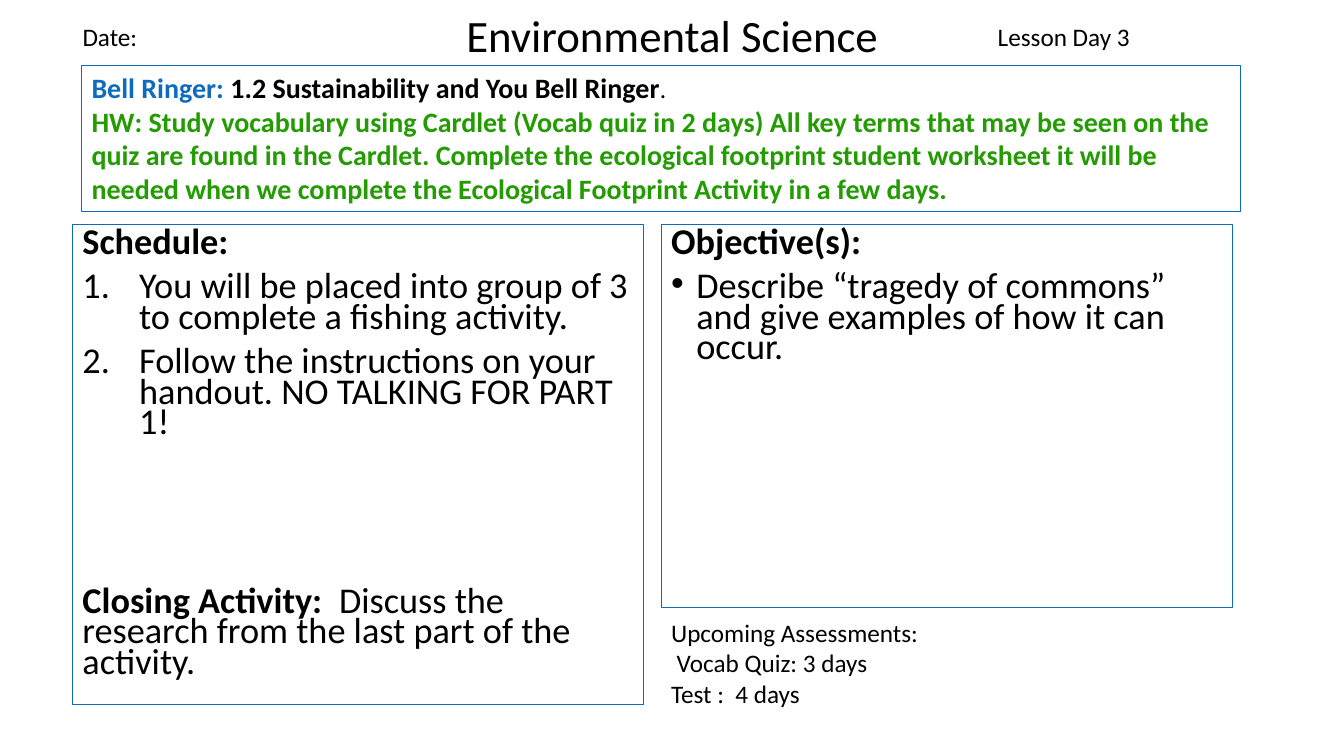
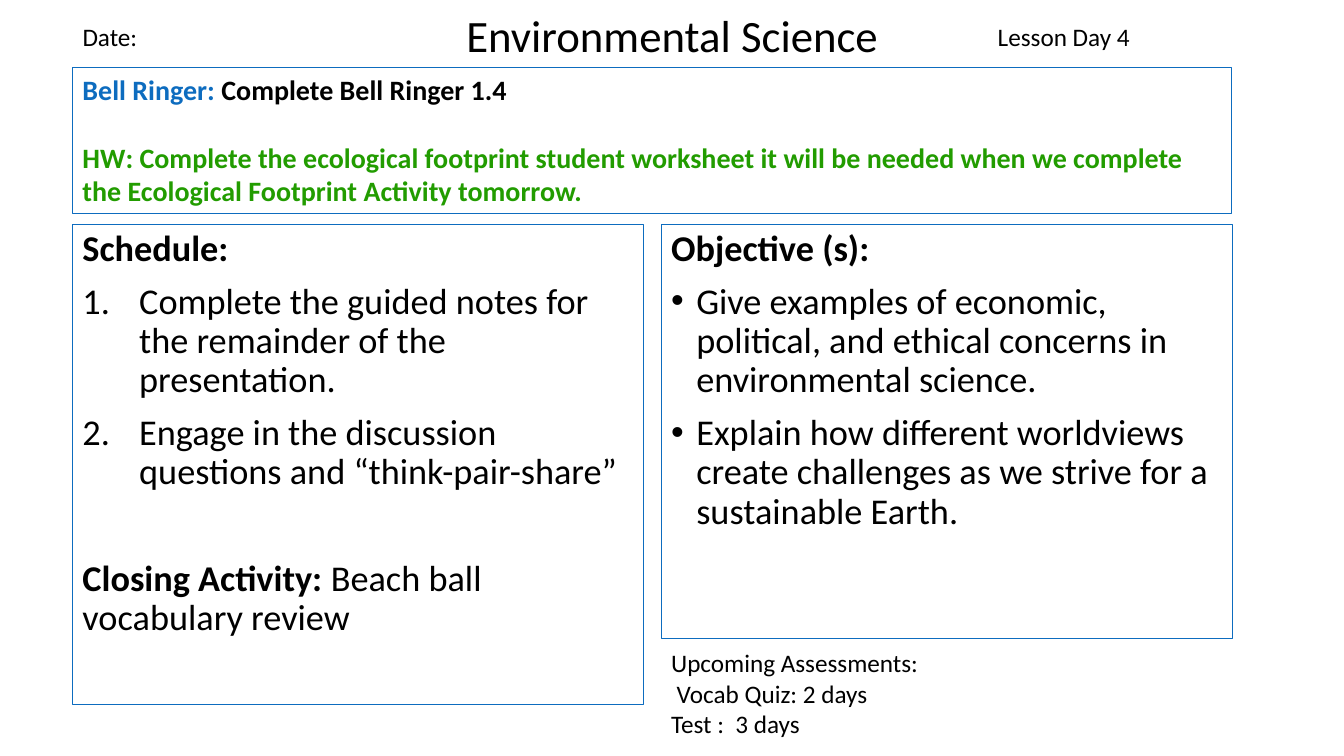
"""Build two daily lesson agenda slides for an environmental science class."""
from dataclasses import dataclass

from lxml import etree
from pptx import Presentation
from pptx import util as u
from pptx.dml import color
from pptx.enum import text
from pptx.oxml import ns


@dataclass(frozen=True)
class Theme:
    font: str = "Calibri"
    ink: str = "000000"
    blue: str = "0D6CBF"
    green: str = "229C00"
    title: float = 32
    body: float = 25.9
    notice: float = 20
    small: float = 18
    border: float = 0.75
    space: float = 10


@dataclass(frozen=True)
class Lesson:
    day: int
    notice_at: tuple
    bell_ringer: str
    bell_ending: str
    homework: str
    homework_gap: float
    schedule: tuple
    closing_label: str
    closing: str
    closing_gap: float
    objective_label: str
    objectives: tuple
    objective_height: float
    spacing: float
    quiz_days: int
    test_days: int


THEME = Theme()
LEFT, RIGHT, TOP = 51.84, 472.3, 160.6
COLUMN, SCHEDULE_HEIGHT = 408.2, 342.7
NUMBER = ("buAutoNum", {"type": "arabicPeriod"}, 40.5)
BULLET = ("buChar", {"char": "•"}, 18)

LESSONS = (
    Lesson(
        day=3,
        notice_at=(58.3, 46.8),
        bell_ringer="1.2 Sustainability and You Bell Ringer",
        bell_ending=".",
        homework="HW: Study vocabulary using Cardlet (Vocab quiz in 2 days) All key terms "
        "that may be seen on the quiz are found in the Cardlet. Complete the ecological "
        "footprint student worksheet it will be needed when we complete the Ecological "
        "Footprint Activity in a few days.",
        homework_gap=0,
        schedule=(
            "You will be placed into group of 3 to complete a fishing activity.",
            "Follow the instructions on your handout. NO TALKING FOR PART 1!",
        ),
        closing_label="Closing Activity:  ",
        closing="Discuss the research from the last part of the activity.",
        closing_gap=106,
        objective_label="Objective(s):",
        objectives=("Describe “tragedy of commons” and give examples of how it can occur.",),
        objective_height=273.6,
        spacing=0.7,
        quiz_days=3,
        test_days=4,
    ),
    Lesson(
        day=4,
        notice_at=(LEFT, 48.2),
        bell_ringer="Complete Bell Ringer 1.4",
        bell_ending="",
        homework="HW: Complete the ecological footprint student worksheet it will be needed "
        "when we complete the Ecological Footprint Activity tomorrow.",
        homework_gap=24.4,
        schedule=(
            "Complete the guided notes for the remainder of the presentation.",
            "Engage in the discussion questions and “think-pair-share”",
        ),
        closing_label="Closing Activity: ",
        closing="Beach ball vocabulary review",
        closing_gap=48,
        objective_label="Objective (s):",
        objectives=(
            "Give examples of economic, political, and ethical concerns in environmental science.",
            "Explain how different worldviews create challenges as we strive for a sustainable Earth.",
        ),
        objective_height=295.2,
        spacing=0.9,
        quiz_days=2,
        test_days=3,
    ),
)


def add_text(para, words, size=THEME.small, ink=THEME.ink, bold=False):
    span = para.add_run()
    span.text = words
    span.font.name = THEME.font
    span.font.size = u.Pt(size)
    span.font.bold = bold
    span.font.color.rgb = color.RGBColor.from_string(ink)


def add_para(frame, before=0, spacing=1.0, marker=None, indent=0):
    first = frame.paragraphs[0]
    para = frame.add_paragraph() if first.runs else first
    para.space_before = u.Pt(before)
    para.line_spacing = spacing
    properties = para._p.get_or_add_pPr()
    if marker:
        tag, values, indent = marker
        properties.set("indent", str(-u.Pt(indent)))
        etree.SubElement(properties, ns.qn("a:buFont"), typeface="Arial")
        etree.SubElement(properties, ns.qn("a:" + tag), **values)
    properties.set("marL", str(u.Pt(indent)))
    return para


def place(shape, left, top, width, height):
    shape.left, shape.top = u.Pt(left), u.Pt(top)
    shape.width, shape.height = u.Pt(width), u.Pt(height)
    frame = shape.text_frame
    frame.word_wrap = True
    frame.auto_size = text.MSO_AUTO_SIZE.NONE
    frame.vertical_anchor = text.MSO_ANCHOR.TOP
    return frame


def add_box(page, left, top, width, height, bordered=False):
    box = page.shapes.add_textbox(0, 0, 0, 0)
    if bordered:
        box.line.color.rgb = color.RGBColor.from_string(THEME.blue)
        box.line.width = u.Pt(THEME.border)
    return place(box, left, top, width, height)


def add_header(page, day):
    frame = place(page.shapes.title, 302.4, 2.2, 355.7, 46)
    para = add_para(frame)
    para.alignment = text.PP_ALIGN.CENTER
    add_text(para, "Environmental Science", size=THEME.title)
    for words, left, width in (("Date:", LEFT, 250), (f"Lesson Day {day}", 705.6, 160.6)):
        add_text(add_para(add_box(page, left, 11.5, width, 29)), words)


def add_notice(page, lesson):
    frame = add_box(page, *lesson.notice_at, 828, 104.4, bordered=True)
    para = add_para(frame)
    add_text(para, "Bell Ringer: ", size=THEME.notice, ink=THEME.blue, bold=True)
    add_text(para, lesson.bell_ringer, size=THEME.notice, bold=True)
    if lesson.bell_ending:
        add_text(para, lesson.bell_ending)
    para = add_para(frame, before=lesson.homework_gap)
    add_text(para, lesson.homework, size=THEME.notice, ink=THEME.green, bold=True)


def add_panel(page, left, height, heading, items, marker, spacing):
    frame = add_box(page, left, TOP, COLUMN, height, bordered=True)
    add_text(add_para(frame, THEME.space, spacing), heading, size=THEME.body, bold=True)
    for item in items:
        add_text(add_para(frame, THEME.space, spacing, marker), item, size=THEME.body)
    return frame


def add_assessments(page, lesson):
    top = TOP + lesson.objective_height + 3.3
    frame = add_box(page, RIGHT, top, COLUMN, 72.7)
    add_text(add_para(frame), "Upcoming Assessments:")
    add_text(add_para(frame, indent=4), f"Vocab Quiz: {lesson.quiz_days} days")
    add_text(add_para(frame), f"Test :  {lesson.test_days} days")


def add_lesson(deck, lesson):
    page = deck.slides.add_slide(deck.slide_layouts.get_by_name("Title Only"))
    add_header(page, lesson.day)
    add_notice(page, lesson)
    frame = add_panel(page, LEFT, SCHEDULE_HEIGHT, "Schedule:", lesson.schedule,
                      NUMBER, lesson.spacing)
    para = add_para(frame, lesson.closing_gap, lesson.spacing)
    add_text(para, lesson.closing_label, size=THEME.body, bold=True)
    add_text(para, lesson.closing, size=THEME.body)
    add_panel(page, RIGHT, lesson.objective_height, lesson.objective_label,
              lesson.objectives, BULLET, lesson.spacing)
    add_assessments(page, lesson)


def main():
    deck = Presentation()
    deck.slide_width, deck.slide_height = u.Pt(960), u.Pt(540)
    for lesson in LESSONS:
        add_lesson(deck, lesson)
    deck.save("out.pptx")


if __name__ == "__main__":
    main()
